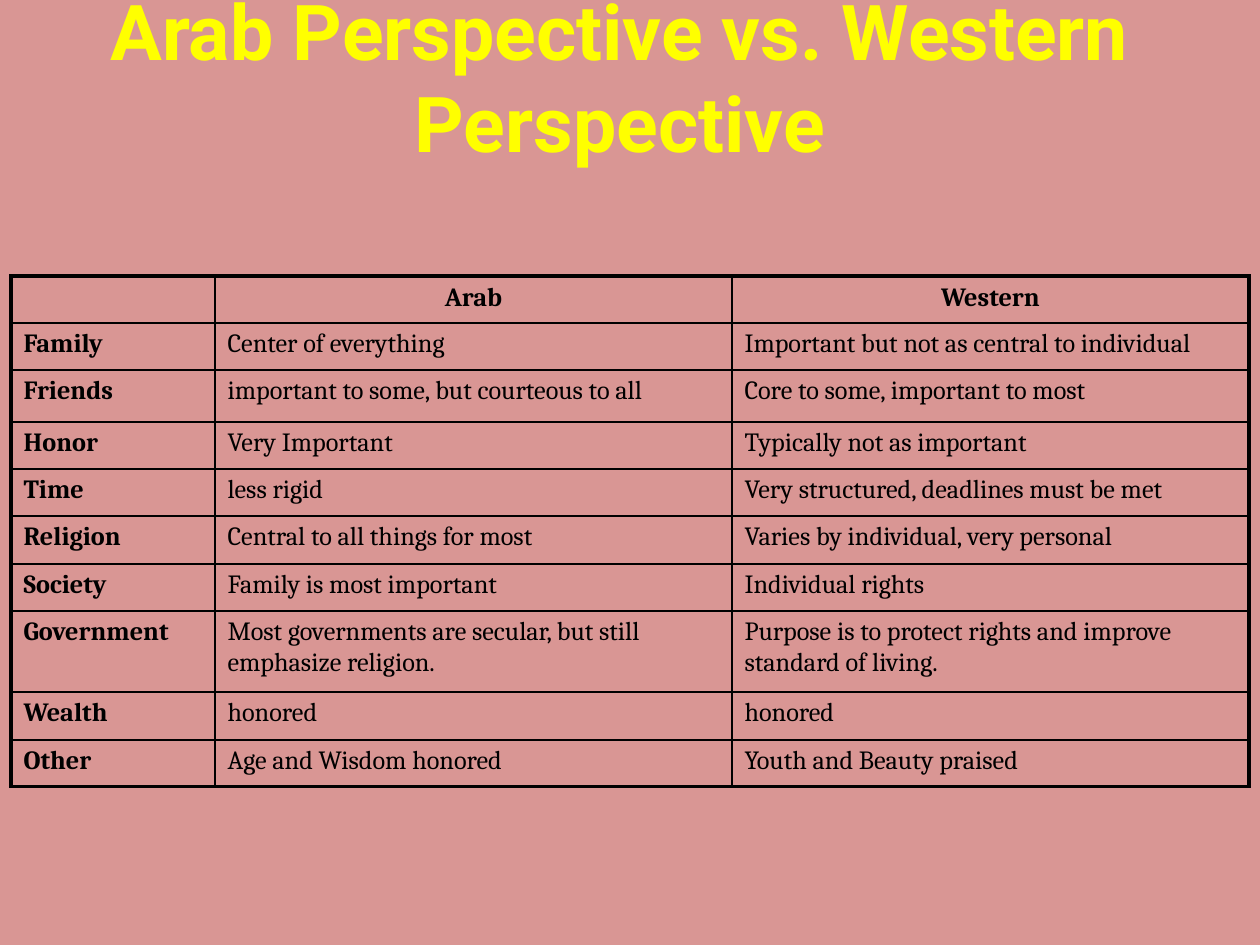
from dataclasses import dataclass
from itertools import pairwise

from lxml.etree import SubElement
from pptx import Presentation
from pptx.dml.color import RGBColor
from pptx.enum.text import MSO_ANCHOR, MSO_AUTO_SIZE, PP_ALIGN
from pptx.oxml.ns import qn
from pptx.util import Pt

TITLE = "Arab Perspective vs. Western Perspective"
ROWS = [
    ("", "Arab", "Western"),
    ("Family", "Center of everything", "Important but not as central to individual"),
    ("Friends", "important to some, but courteous to all", "Core to some, important to most"),
    ("Honor", "Very Important", "Typically not as important"),
    ("Time", "less rigid", "Very structured, deadlines must be met"),
    ("Religion", "Central to all things for most", "Varies by individual, very personal"),
    ("Society", "Family is most important", "Individual rights"),
    ("Government", "Most governments are secular, but still emphasize religion.",
     "Purpose is to protect rights and improve standard of living."),
    ("Wealth", "honored", "honored"),
    ("Other", "Age and Wisdom honored", "Youth and Beauty praised"),
]

# Lengths in px, 126 to the inch
EMU_PER_PX = 914400 // 126
SLIDE_SIZE = (1260, 945)
TITLE_BOX = (53, 21, 1134, 110)
COLUMN_EDGES = [11, 215, 732, 1249]
ROW_EDGES = [276, 323, 370, 422, 469, 516, 564, 611, 692, 740, 787]


@dataclass(frozen=True)
class Theme:
    background: str = "D99694"
    title_color: str = "FFFF00"
    ink: str = "000000"
    title_font: str = "Roboto"
    table_font: str = "Cambria"
    title_size: int = 44
    table_size: int = 15
    inner_line: float = 1
    outer_line: float = 2.25


THEME = Theme()


def px(length):
    return length * EMU_PER_PX


def format_text(paragraph, font, size, color, bold):
    for run in paragraph.runs:
        run.font.name = font
        run.font.size = Pt(size)
        run.font.bold = bold
        run.font.color.rgb = RGBColor.from_string(color)


def add_border(cell, side, width):
    properties = cell._tc.get_or_add_tcPr()
    line = SubElement(properties, qn(f"a:ln{side}"), w=str(Pt(width)))
    fill = SubElement(line, qn("a:solidFill"))
    SubElement(fill, qn("a:srgbClr"), val=THEME.ink)


def add_title(slide):
    title = slide.shapes.title
    title.left, title.top, title.width, title.height = map(px, TITLE_BOX)
    frame = title.text_frame
    frame.text = TITLE
    frame.word_wrap = True
    frame.auto_size = MSO_AUTO_SIZE.NONE
    frame.vertical_anchor = MSO_ANCHOR.MIDDLE
    paragraph = frame.paragraphs[0]
    paragraph.alignment = PP_ALIGN.CENTER
    format_text(paragraph, THEME.title_font, THEME.title_size, THEME.title_color, True)


def fill_cell(cell, text, row, column):
    last_row, last_column = len(ROWS) - 1, len(ROWS[0]) - 1
    outer_sides = {"L": column == 0, "R": column == last_column,
                   "T": row == 0, "B": row == last_row}
    for side, is_outer in outer_sides.items():
        add_border(cell, side, THEME.outer_line if is_outer else THEME.inner_line)
    cell.fill.background()

    paragraph = cell.text_frame.paragraphs[0]
    if not text:
        # Keeps the empty cell's line as low as the others
        paragraph._p.get_or_add_endParaRPr().set("sz", str(THEME.table_size * 100))
        return
    paragraph.text = text
    paragraph.alignment = PP_ALIGN.CENTER if row == 0 else PP_ALIGN.LEFT
    format_text(paragraph, THEME.table_font, THEME.table_size, THEME.ink,
                row == 0 or column == 0)


def add_comparison_table(slide):
    left, top = COLUMN_EDGES[0], ROW_EDGES[0]
    width, height = COLUMN_EDGES[-1] - left, ROW_EDGES[-1] - top
    table = slide.shapes.add_table(
        len(ROWS), len(ROWS[0]), *map(px, (left, top, width, height))).table
    table.first_row = table.horz_banding = False
    for column, (start, end) in zip(table.columns, pairwise(COLUMN_EDGES)):
        column.width = px(end - start)
    for row, (start, end) in zip(table.rows, pairwise(ROW_EDGES)):
        row.height = px(end - start)
    for row, texts in enumerate(ROWS):
        for column, text in enumerate(texts):
            fill_cell(table.cell(row, column), text, row, column)


def main():
    presentation = Presentation()
    presentation.slide_width, presentation.slide_height = map(px, SLIDE_SIZE)
    title_only = presentation.slide_layouts[5]
    slide = presentation.slides.add_slide(title_only)
    slide.background.fill.solid()
    slide.background.fill.fore_color.rgb = RGBColor.from_string(THEME.background)
    add_title(slide)
    add_comparison_table(slide)
    presentation.save("out.pptx")


if __name__ == "__main__":
    main()
